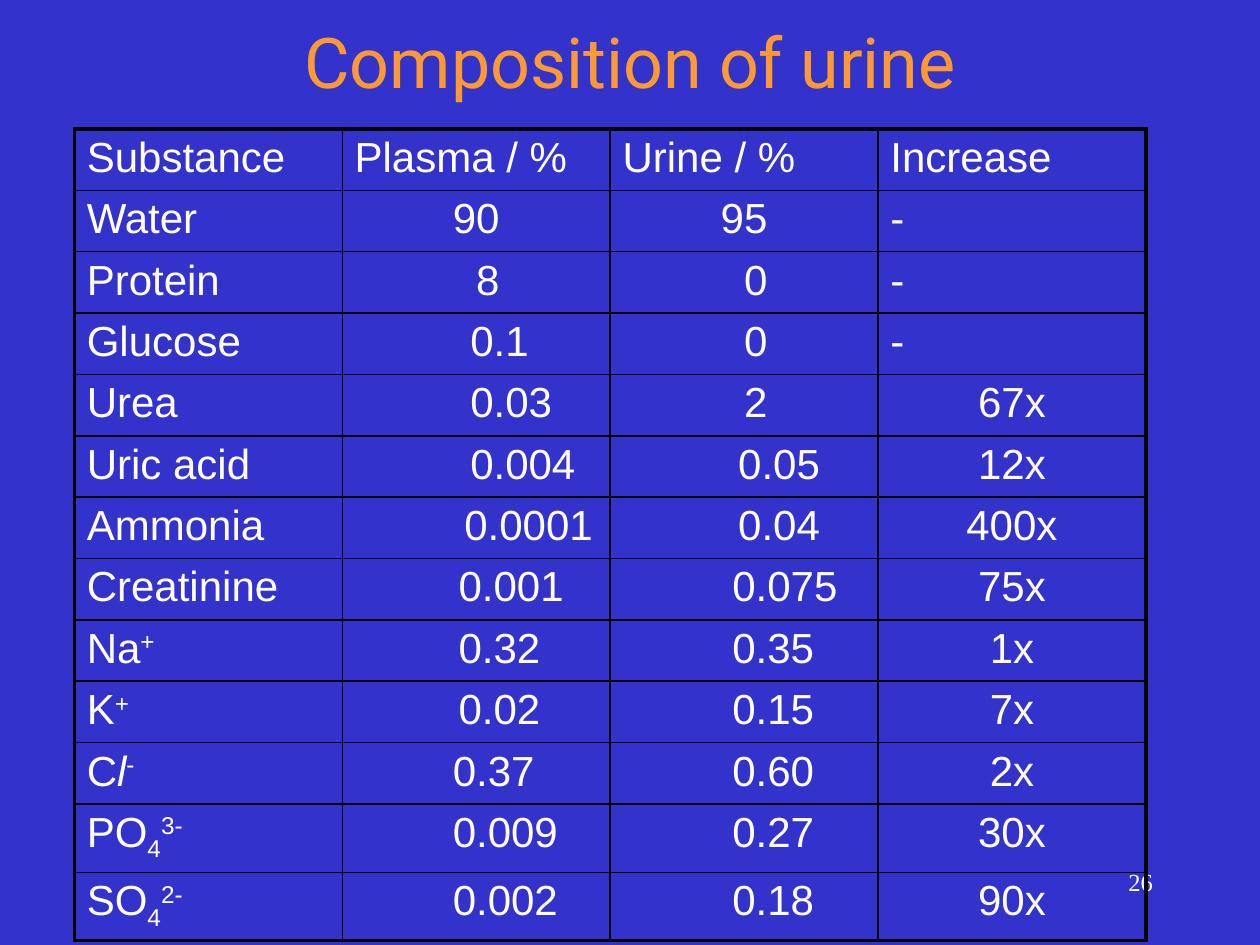
from lxml.etree import SubElement
from pptx import Presentation
from pptx.dml.color import RGBColor as Rgb
from pptx.enum.text import MSO_ANCHOR as Anchor, PP_ALIGN as Align
from pptx.oxml.ns import qn
from pptx.util import Cm, Pt

WHITE, BLACK, ORANGE, BLUE = "FFFFFF", "000000", "FF9933", "3333CC"
SPACE_WIDTH = 0.235
SIDE_MARGIN = 0.25
ROW_HEIGHT, SUBSCRIPT_ROW_HEIGHT = 1.2, 1.33
COLUMN_WIDTH = 5.4
THIN, THICK = 1, 2.25

BODY = {"name": "Arial", "size": Pt(24)}
TITLE = {"name": "Roboto", "size": Pt(40)}
PAGE_NUMBER = {"name": "Times New Roman", "size": Pt(14)}
PLAIN, ITALIC, SUPER, SUB = {}, {"italic": True}, 30000, -25000

HEADINGS = ["Substance", "Plasma / %", "Urine / %", "Increase"]

# Each figure is followed by its indent, counted in space widths.
COMPOSITION = [
    ("Water", ("90", 0), ("95", 0), "-"),
    ("Protein", ("8", 2), ("0", 2), "-"),
    ("Glucose", ("0.1", 4), ("0", 2), "-"),
    ("Urea", ("0.03", 6), ("2", 2), "67x"),
    ("Uric acid", ("0.004", 8), ("0.05", 6), "12x"),
    ("Ammonia", ("0.0001", 9), ("0.04", 6), "400x"),
    ("Creatinine", ("0.001", 6), ("0.075", 7), "75x"),
    ([("Na", 0), ("+", SUPER)], ("0.32", 4), ("0.35", 5), "1x"),
    ([("K", 0), ("+", SUPER)], ("0.02", 4), ("0.15", 5), "7x"),
    ([("C", 0), ("l", 0, ITALIC), ("-", SUPER)], ("0.37", 3), ("0.60", 5), "2x"),
    ([("PO", 0), ("4", SUB), ("3-", SUPER)], ("0.009", 5), ("0.27", 5), "30x"),
    ([("SO", 0), ("4", SUB), ("2-", SUPER)], ("0.002", 5), ("0.18", 5), "90x"),
]


def colour(hex_value):
    return Rgb.from_string(hex_value)


def add_run(paragraph, text, style, hex_value, baseline=0):
    run = paragraph.add_run()
    run.text = text
    for attribute, value in style.items():
        setattr(run.font, attribute, value)
    run.font.color.rgb = colour(hex_value)
    if baseline:
        run.font._element.set("baseline", str(baseline))


def add_label(slide, text, box, style, hex_value, align, anchor):
    frame = slide.shapes.add_textbox(*map(Cm, box)).text_frame
    frame.word_wrap = True
    frame.vertical_anchor = anchor
    paragraph = frame.paragraphs[0]
    paragraph.alignment = align
    add_run(paragraph, text, style, hex_value)


def set_borders(cell, widths):
    properties = cell._tc.get_or_add_tcPr()
    for side, width in widths.items():
        line = SubElement(properties, qn(f"a:ln{side}"), w=str(Pt(width)))
        fill = SubElement(line, qn("a:solidFill"))
        SubElement(fill, qn("a:srgbClr"), val=BLACK)


def fill_cell(cell, parts, align, indent=0):
    margins = {
        "margin_left": Cm(SIDE_MARGIN + indent * SPACE_WIDTH),
        "margin_right": Cm(SIDE_MARGIN),
        "margin_top": Cm(0.11),
        "margin_bottom": Cm(0.11),
    }
    for attribute, value in margins.items():
        setattr(cell, attribute, value)
    paragraph = cell.text_frame.paragraphs[0]
    paragraph.alignment = align
    for text, baseline, *extra in parts:
        style = BODY | (extra[0] if extra else PLAIN)
        add_run(paragraph, text, style, WHITE, baseline)


def fill_entry(cell, entry, centred):
    align = Align.CENTER if centred else Align.LEFT
    if isinstance(entry, tuple):
        figure, indent = entry
        fill_cell(cell, [(figure, 0)], align, indent)
    else:
        parts = [(entry, 0)] if isinstance(entry, str) else entry
        fill_cell(cell, parts, align)


def add_composition_table(slide):
    entries = [HEADINGS, *COMPOSITION]
    heights = [ROW_HEIGHT] * (len(entries) - 2) + [SUBSCRIPT_ROW_HEIGHT] * 2
    last_row, last_column = len(entries) - 1, len(HEADINGS) - 1
    table = slide.shapes.add_table(
        len(entries), len(HEADINGS), Cm(1.5), Cm(2.6),
        Cm(COLUMN_WIDTH * len(HEADINGS)), Cm(sum(heights)),
    ).table
    table.first_row = table.horz_banding = False
    for column in table.columns:
        column.width = Cm(COLUMN_WIDTH)
    for r, (row, height) in enumerate(zip(entries, heights)):
        table.rows[r].height = Cm(height)
        for c, entry in enumerate(row):
            cell = table.cell(r, c)
            fill_entry(cell, entry, r > 0 and c > 0 and entry != "-")
            set_borders(cell, {
                "L": THICK if c == 0 else THIN,
                "R": THICK if c == last_column else THIN,
                "T": THICK if r == 0 else THIN,
                "B": THICK if r == last_row else THIN,
            })
            cell.fill.background()


def main():
    deck = Presentation()
    deck.slide_width, deck.slide_height = Cm(25.4), Cm(19.05)
    slide = deck.slides.add_slide(deck.slide_layouts[6])
    slide.background.fill.solid()
    slide.background.fill.fore_color.rgb = colour(BLUE)
    add_label(slide, "26", (18.2, 17.35, 5.29, 1.27), PAGE_NUMBER, WHITE,
              Align.RIGHT, Anchor.TOP)
    add_label(slide, "Composition of urine", (1.9, 0, 21.6, 2.46), TITLE, ORANGE,
              Align.CENTER, Anchor.MIDDLE)
    add_composition_table(slide)
    deck.save("out.pptx")


if __name__ == "__main__":
    main()
